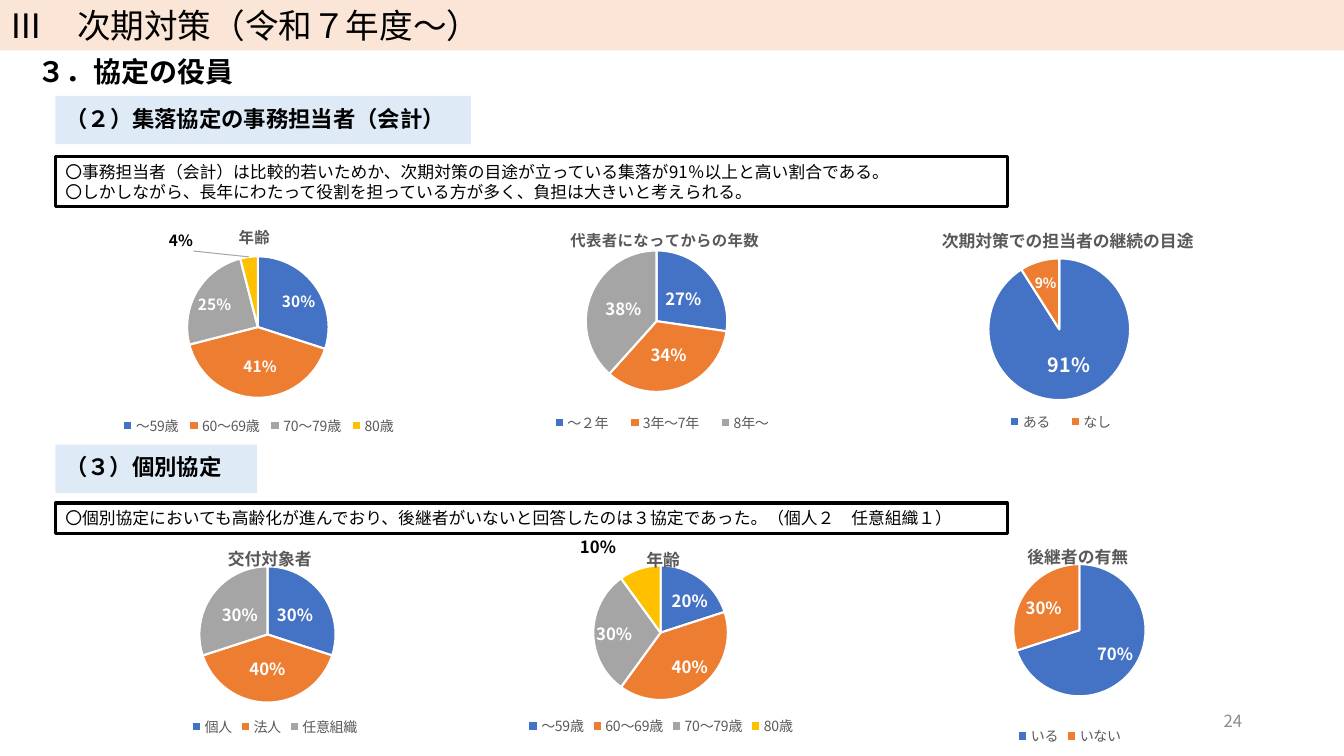
import pptx
import pptx.util
import pptx.chart.data
import pptx.dml.color
import pptx.enum.chart
import pptx.enum.shapes
import pptx.enum.text
import pptx.oxml.ns
from lxml import etree

Inches, Pt, qn = pptx.util.Inches, pptx.util.Pt, pptx.oxml.ns.qn
POS = pptx.enum.chart.XL_LABEL_POSITION
MIDDLE = pptx.enum.text.MSO_ANCHOR.MIDDLE
ALIGN = pptx.enum.text.PP_ALIGN


def rgb(value):
    return pptx.dml.color.RGBColor.from_string(value)


def add_layout(parent, after, numbers, inner=False):
    """Place a chart part by fractions of the chart: x, y and perhaps w, h."""
    for old in parent.findall(qn("c:layout")):
        parent.remove(old)
    layout = etree.Element(qn("c:layout"))
    manual = etree.SubElement(layout, qn("c:manualLayout"))
    if inner:
        etree.SubElement(manual, qn("c:layoutTarget"), val="inner")
    if after != "c:idx":
        for tag in ("c:xMode", "c:yMode"):
            etree.SubElement(manual, qn(tag), val="edge")
    for tag, number in zip("xywh", numbers):
        etree.SubElement(manual, qn("c:" + tag), val=str(round(number, 4)))
    if after:
        parent.find(qn(after)).addnext(layout)
    else:
        parent.insert(0, layout)


class Deck:
    font = "Noto Sans CJK JP"
    black, grey, white = "000000", "595959", "FFFFFF"
    slices = ["4472C4", "ED7D31", "A5A5A5", "FFC000"]

    def __init__(self):
        self.prs = pptx.Presentation()
        self.prs.slide_width, self.prs.slide_height = Inches(13.33), Inches(7.5)
        self.s = self.prs.slides.add_slide(self.prs.slide_layouts[5])

    def style(self, font, size, color, bold=False):
        font.name, font.size, font.bold = self.font, Pt(size), bold
        font.color.rgb = rgb(color)

    def add_east_asian(self, element):
        for latin in list(element.iter(qn("a:latin"))):
            latin.addnext(etree.Element(qn("a:ea"), typeface=self.font))

    def fill_text(self, sp, lines, size, color=black, bold=False, spacing=0.9, align=ALIGN.LEFT):
        tf = sp.text_frame
        tf.word_wrap, tf.vertical_anchor = True, MIDDLE
        tf.auto_size = pptx.enum.text.MSO_AUTO_SIZE.NONE
        for i, line in enumerate(lines):
            p = tf.add_paragraph() if i else tf.paragraphs[0]
            p.alignment, p.line_spacing = align, spacing
            r = p.add_run()
            r.text = line
            self.style(r.font, size, color, bold)
        self.add_east_asian(sp.element)

    def title(self, box, text):
        sp = self.s.shapes.title
        sp.left, sp.top, sp.width, sp.height = map(Inches, box)
        self.fill_text(sp, [text], 20, bold=True)

    def text(self, box, text, size, color, align):
        sp = self.s.shapes.add_textbox(*map(Inches, box))
        self.fill_text(sp, [text], size, color, align=align, spacing=1.0)

    def box(self, box, lines, size, fill=None, line=None, **options):
        sp = self.s.shapes.add_shape(
            pptx.enum.shapes.MSO_SHAPE.RECTANGLE, *map(Inches, box))
        sp.shadow.inherit = False
        if fill:
            sp.fill.solid()
            sp.fill.fore_color.rgb = rgb(fill)
        else:
            sp.fill.background()
        if line:
            sp.line.color.rgb, sp.line.width = rgb(line), Pt(2.25)
        else:
            sp.line.fill.background()
        self.fill_text(sp, lines, size, **options)

    def heading(self, top, width, text):
        self.box((0.55, top, width, 0.48), [text], 16, fill="DEEBF7", bold=True)

    def note(self, top, height, lines):
        self.box((0.55, top, 9.44, height), lines, 12, line=self.black, spacing=Pt(14.4))

    def pie(self, box, title, title_at, values, plot, title_size=12, label_size=12,
            label_pos=None, legend=None, points=None, leader=None):
        left, top, width, height = box
        data = pptx.chart.data.CategoryChartData()
        data.categories = list(values)
        data.add_series(title, list(values.values()))
        chart = self.s.shapes.add_chart(
            pptx.enum.chart.XL_CHART_TYPE.PIE, *map(Inches, box), data).chart
        root = chart.element
        self.style(chart.font, 10, self.black)

        # Transparent chart area
        area = etree.Element(qn("c:spPr"))
        etree.SubElement(area, qn("a:noFill"))
        line = etree.SubElement(area, qn("a:ln"))
        etree.SubElement(line, qn("a:noFill"))
        root.find(qn("c:chart")).addnext(area)

        # Chart title
        chart.has_title = True
        r = chart.chart_title.text_frame.paragraphs[0].add_run()
        r.text = title
        self.style(r.font, title_size, self.grey, True)
        at = ((title_at[0] - left) / width, (title_at[1] - top) / height)
        add_layout(next(root.iter(qn("c:title"))), "c:tx", at)

        # Legend
        chart.has_legend = True
        chart.legend.position = pptx.enum.chart.XL_LEGEND_POSITION.BOTTOM
        chart.legend.include_in_layout = False
        self.style(chart.legend.font, 10, self.grey)
        if legend:
            x, y, w, h = legend
            place = ((x - left) / width, (y - top) / height, w / width, h / height)
            add_layout(next(root.iter(qn("c:legend"))), "c:legendPos", place)

        # Slices
        add_layout(next(root.iter(qn("c:plotArea"))), None, plot, inner=True)
        chart.plots[0].vary_by_categories = True
        series = chart.plots[0].series[0]
        for i, color in enumerate(self.slices[:len(values)]):
            fmt = series.points[i].format
            fmt.fill.solid()
            fmt.fill.fore_color.rgb = rgb(color)
            fmt.line.color.rgb, fmt.line.width = rgb(self.white), Pt(1.5)

        # Percent labels
        labels = series.data_labels
        labels.show_percentage, labels.show_value = True, False
        self.style(labels.font, label_size, self.white, True)
        if label_pos is not None:
            labels.position = label_pos
        for i, (pos, size, color, shift) in (points or {}).items():
            label = series.points[i].data_label
            self.style(label.font, size, color, True)
            label.position = pos
            d = list(root.iter(qn("c:dLbl")))[-1]
            d.find(qn("c:showVal")).set("val", "0")
            d.find(qn("c:showPercent")).set("val", "1")
            add_layout(d, "c:idx", shift)

        # Leader lines
        group = next(root.iter(qn("c:dLbls")))
        show = group.find(qn("c:showLeaderLines"))
        if show is None:
            show = etree.SubElement(group, qn("c:showLeaderLines"))
        show.set("val", "1" if leader else "0")
        if leader:
            lines = etree.Element(qn("c:leaderLines"))
            show.addnext(lines)
            ln = etree.SubElement(etree.SubElement(lines, qn("c:spPr")), qn("a:ln"), w="9525")
            fill = etree.SubElement(ln, qn("a:solidFill"))
            etree.SubElement(fill, qn("a:srgbClr"), val=leader)
        self.add_east_asian(root)


def main():
    d = Deck()
    ages = ["～59歳", "60～69歳", "70～79歳", "80歳"]

    # Upper row: accounting officers
    d.pie((8.63, 1.95, 3.95, 3.14), "次期対策での担当者の継続の目途", (9.31, 2.21),
          {"ある": 91, "なし": 9}, (0.297, 0.195, 0.356, 0.449),
          label_pos=POS.CENTER, legend=(9.86, 4.04, 1.32, 0.28),
          points={0: (POS.CENTER, 14, d.white, (0, 0)),
                  1: (POS.CENTER, 10, d.white, (-0.01, -0.04))})
    d.pie((4.9, 1.87, 3.32, 2.86), "代表者になってからの年数", (5.63, 2.22),
          {"～２年": 27, "3年～7年": 34, "8年～": 38}, (0.274, 0.215, 0.423, 0.491),
          title_size=11, label_pos=POS.CENTER, legend=(5.33, 4.05, 2.47, 0.28))
    d.pie((0.71, 1.92, 3.41, 2.86), "年齢", (2.34, 2.19),
          dict(zip(ages, [30, 41, 25, 4])), (0.336, 0.218, 0.412, 0.491),
          title_size=11, label_size=11, label_pos=POS.BEST_FIT,
          legend=(1.16, 4.08, 2.81, 0.28), leader="A6A6A6",
          points={1: (POS.CENTER, 11, d.white, (0.01, 0.01)),
                  3: (POS.OUTSIDE_END, 11, d.black, (-0.16, 0))})

    # Banner, title, headings and notes
    d.box((0, 0, 13.33, 0.5), ["Ⅲ　次期対策（令和７年度～）"], 24,
          fill="FBE5D6", spacing=Pt(28.8))
    d.title((0.27, 0.49, 9.27, 0.48), "３．協定の役員")
    d.heading(0.95, 4.12, "（２）集落協定の事務担当者（会計）")
    d.note(1.55, 0.5, [
        "〇事務担当者（会計）は比較的若いためか、次期対策の目途が立っている集落が91％以上と高い割合である。",
        "〇しかしながら、長年にわたって役割を担っている方が多く、負担は大きいと考えられる。"])
    d.heading(4.41, 2, "（３）個別協定")
    d.note(4.99, 0.3, [
        "〇個別協定においても高齢化が進んでおり、後継者がいないと回答したのは３協定であった。（個人２　任意組織１）"])
    d.text((9.42, 6.95, 3, 0.4), "24", 12, "8C8C8C", ALIGN.RIGHT)

    # Lower row: individual agreements
    d.pie((-0.15, 5.13, 5.75, 2.22), "交付対象者", (2.23, 5.36),
          {"個人": 30, "法人": 40, "任意組織": 30}, (0.37, 0.22, 0.235, 0.61),
          label_pos=POS.CENTER)
    d.pie((3.83, 5.12, 5.45, 2.22), "年齢", (6.38, 5.37),
          dict(zip(ages, [20, 40, 30, 10])), (0.377, 0.22, 0.245, 0.603),
          points={3: (POS.OUTSIDE_END, 12, d.black, (-0.04, -0.02))})
    d.pie((8.95, 5.08, 3.32, 2.36), "後継者の有無", (10.16, 5.34),
          {"いる": 70, "いない": 30}, (0.331, 0.219, 0.396, 0.556),
          label_pos=POS.BEST_FIT)

    d.prs.save("out.pptx")


if __name__ == "__main__":
    main()
